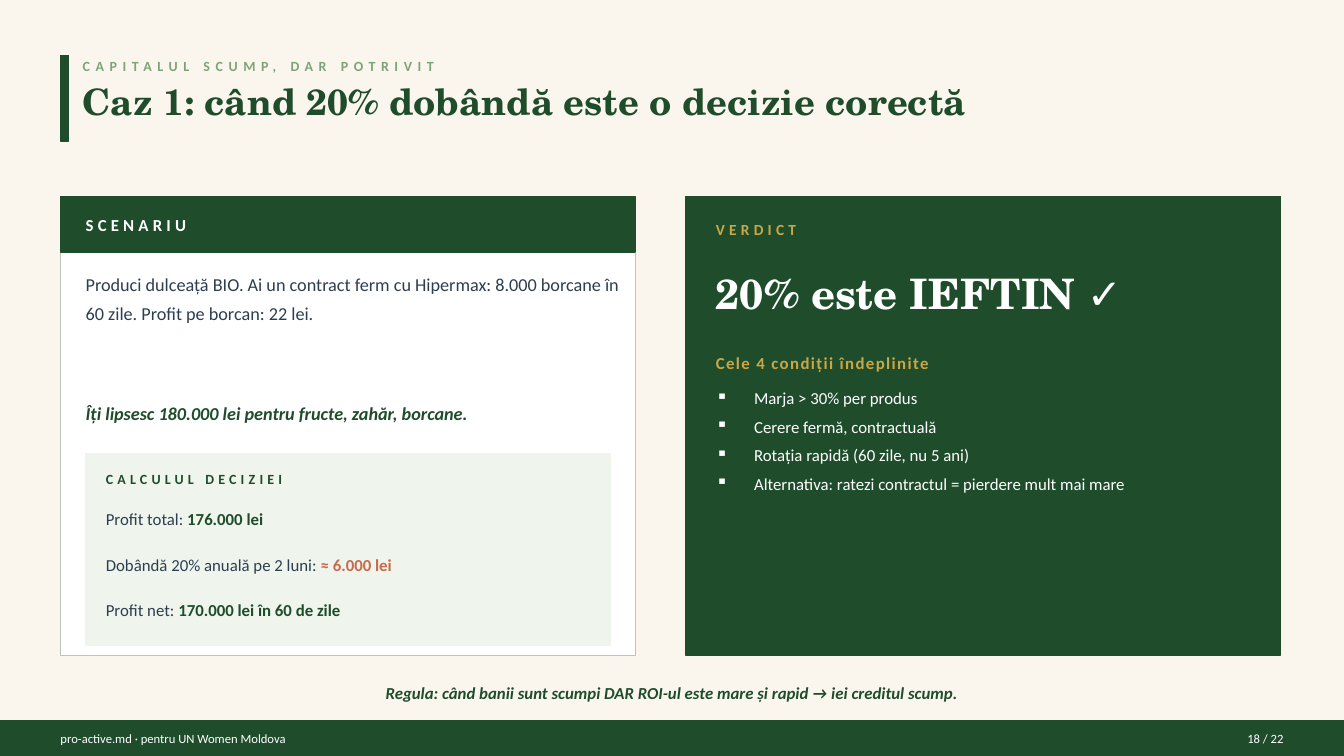
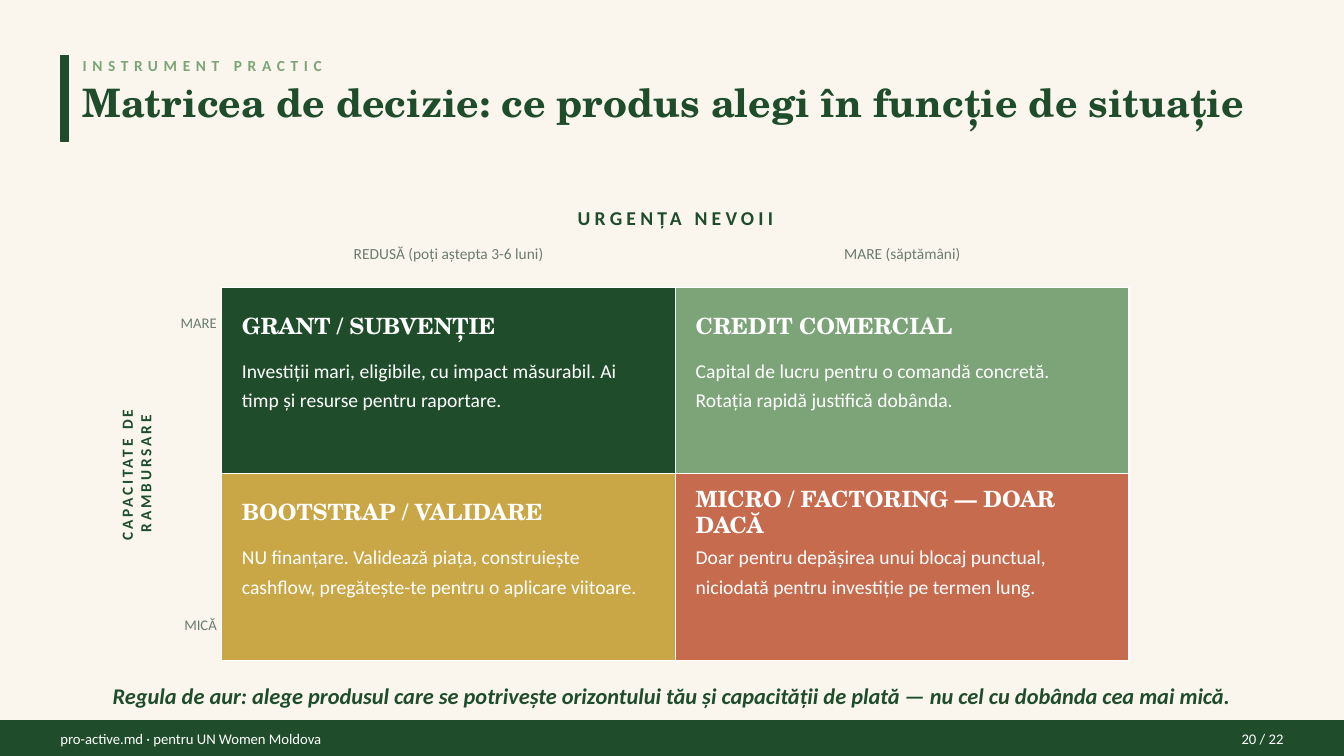
"""Build two slides on choosing the right kind of financing."""
from lxml import etree
from pptx import Presentation
from pptx import util as u
from pptx.dml.color import RGBColor
from pptx.enum import shapes, text
from pptx.oxml import ns

GREEN = RGBColor(0x1F, 0x4D, 0x2C)
SAGE = RGBColor(0x7D, 0xA4, 0x78)
GOLD = RGBColor(0xC9, 0xA6, 0x46)
RUST = RGBColor(0xC6, 0x6B, 0x4E)
CREAM = RGBColor(0xFA, 0xF6, 0xEE)
MINT = RGBColor(0xEF, 0xF4, 0xEC)
BORDER = RGBColor(0xB8, 0xC9, 0xB5)
INK = RGBColor(0x2C, 0x3E, 0x50)
GRAY = RGBColor(0x6B, 0x7B, 0x6E)
WHITE = RGBColor(0xFF, 0xFF, 0xFF)

BODY, SERIF = "Calibri", "TeX Gyre Schola"
LEFT, CENTER, RIGHT = text.PP_ALIGN.LEFT, text.PP_ALIGN.CENTER, text.PP_ALIGN.RIGHT
TOP, MIDDLE = text.MSO_ANCHOR.TOP, text.MSO_ANCHOR.MIDDLE

WIDTH, HEIGHT = 13.33, 7.5
MARGIN, CONTENT = 0.6, 12.13
BAND = 0.35
FOOTER = "pro-active.md · pentru UN Women Moldova"

CASE = {
    "kicker": "CAPITALUL SCUMP, DAR POTRIVIT",
    "title": "Caz 1: când 20% dobândă este o decizie corectă",
    "rule": "Regula: când banii sunt scumpi DAR ROI-ul este mare și rapid → iei creditul scump.",
    "page": "18 / 22",
    "sizes": {"kicker": 10, "title": 26, "rule": 12, "footer": 9},
    "rule_height": 0.35,
}
SCENARIO = ("Produci dulceață BIO. Ai un contract ferm cu Hipermax: "
            "8.000 borcane în 60 zile. Profit pe borcan: 22 lei.")
NEED = "Îți lipsesc 180.000 lei pentru fructe, zahăr, borcane."
CALCULATION = [
    ("Profit total: ", "176.000 lei", GREEN),
    ("Dobândă 20% anuală pe 2 luni: ", "≈ 6.000 lei", RUST),
    ("Profit net: ", "170.000 lei în 60 de zile", GREEN),
]
CONDITIONS = [
    "Marja > 30% per produs",
    "Cerere fermă, contractuală",
    "Rotația rapidă (60 zile, nu 5 ani)",
    "Alternativa: ratezi contractul = pierdere mult mai mare",
]

MATRIX = {
    "kicker": "INSTRUMENT PRACTIC",
    "title": "Matricea de decizie: ce produs alegi în funcție de situație",
    "rule": "Regula de aur: alege produsul care se potrivește orizontului tău și "
            "capacității de plată — nu cel cu dobânda cea mai mică.",
    "page": "20 / 22",
    "sizes": {"kicker": 11, "title": 28, "rule": 16, "footer": 10.5},
    "rule_height": 0.4,
}
URGENCY = ["REDUSĂ (poți aștepta 3-6 luni)", "MARE (săptămâni)"]
CAPACITY = [("MARE", 3.05), ("MICĂ", 6.05)]
QUADRANTS = [
    ("GRANT / SUBVENȚIE", GREEN,
     "Investiții mari, eligibile, cu impact măsurabil. Ai timp și resurse pentru raportare."),
    ("CREDIT COMERCIAL", SAGE,
     "Capital de lucru pentru o comandă concretă. Rotația rapidă justifică dobânda."),
    ("BOOTSTRAP / VALIDARE", GOLD,
     "NU finanțare. Validează piața, construiește cashflow, "
     "pregătește-te pentru o aplicare viitoare."),
    ("MICRO / FACTORING — DOAR DACĂ", RUST,
     "Doar pentru depășirea unui blocaj punctual, niciodată pentru investiție pe termen lung."),
]


def add_panel(slide, box, fill, line=None, weight=1):
    """Draw a filled rectangle, outlined in its own colour unless told otherwise."""
    panel = slide.shapes.add_shape(shapes.MSO_SHAPE.RECTANGLE, *map(u.Inches, box))
    panel.shadow.inherit = False
    panel.fill.solid()
    panel.fill.fore_color.rgb = fill
    panel.line.color.rgb = line or fill
    panel.line.width = u.Pt(weight)


def add_bullet(paragraph, indent=0.38):
    """Give a paragraph a square bullet with a hanging indent."""
    properties = paragraph._p.get_or_add_pPr()
    properties.set("marL", str(u.Inches(indent)))
    properties.set("indent", str(-u.Inches(indent)))
    etree.SubElement(properties, ns.qn("a:buChar")).set("char", "▪")
    paragraph.space_after = u.Pt(6)


def add_text(slide, box, lines, size, color, font=BODY, bold=False, italic=False,
             align=LEFT, anchor=MIDDLE, tracking=0, leading=None, bullets=False):
    """Place one or more evenly styled paragraphs and return the text box."""
    text_box = slide.shapes.add_textbox(*map(u.Inches, box))
    frame = text_box.text_frame
    frame.word_wrap = True
    frame.vertical_anchor = anchor
    frame.margin_left = frame.margin_right = frame.margin_top = frame.margin_bottom = 0
    for index, line in enumerate([lines] if isinstance(lines, str) else lines):
        paragraph = frame.paragraphs[0] if index == 0 else frame.add_paragraph()
        paragraph.alignment = align
        if leading:
            paragraph.line_spacing = leading
        if bullets:
            add_bullet(paragraph)
        paragraph.font.name = font
        paragraph.font.size = u.Pt(size)
        paragraph.font.color.rgb = color
        paragraph.font.bold = bold
        paragraph.font.italic = italic
        run = paragraph.add_run()
        run.text = line
        if tracking:
            run._r.get_or_add_rPr().set("spc", str(tracking * 100))
    return text_box


def add_base_slide(presentation, content):
    """Add a slide with its background, heading, closing rule and footer."""
    slide = presentation.slides.add_slide(presentation.slide_layouts[6])
    slide.background.fill.solid()
    slide.background.fill.fore_color.rgb = CREAM
    sizes = content["sizes"]
    add_panel(slide, (MARGIN, 0.55, 0.08, 0.85), GREEN)
    add_text(slide, (0.82, 0.5, CONTENT, 0.3), content["kicker"], sizes["kicker"], SAGE,
             bold=True, tracking=4)
    add_text(slide, (0.82, 0.78, CONTENT, 0.85), content["title"], sizes["title"], GREEN,
             font=SERIF, bold=True, anchor=TOP)
    add_text(slide, (MARGIN, 6.7, CONTENT, content["rule_height"]), content["rule"],
             sizes["rule"], GREEN, bold=True, italic=True, align=CENTER)
    band_top = HEIGHT - BAND
    add_panel(slide, (0, band_top, WIDTH, BAND), GREEN)
    add_text(slide, (MARGIN, band_top, 6, BAND), FOOTER, sizes["footer"], WHITE)
    add_text(slide, (MARGIN + CONTENT - 1.5, band_top, 1.5, BAND), content["page"],
             sizes["footer"], WHITE, align=RIGHT)
    return slide


def add_scenario(slide):
    """Fill the left card with the scenario and its calculation."""
    top, width, inner, text_width = 1.95, 5.7, MARGIN + 0.25, 5.4
    add_panel(slide, (MARGIN, top, width, 4.55), WHITE, BORDER, 0.75)
    add_panel(slide, (MARGIN, top, width, 0.55), GREEN)
    add_text(slide, (inner, top, text_width, 0.55), "SCENARIU", 12, WHITE,
             bold=True, tracking=3)
    add_text(slide, (inner, 2.65, text_width, 1.1), SCENARIO, 13, INK, anchor=TOP, leading=1.3)
    add_text(slide, (inner, 3.8, text_width, 0.6), NEED, 13, GREEN, bold=True, italic=True)
    add_panel(slide, (inner, 4.5, 5.2, 1.9), MINT)
    add_text(slide, (inner + 0.2, 4.6, 5, 0.3), "CALCULUL DECIZIEI", 10, GREEN,
             bold=True, tracking=3)
    for row, (label, amount, color) in enumerate(CALCULATION):
        line = add_text(slide, (inner + 0.2, 4.95 + row * 0.45, 5.1, 0.4), label, 12, INK)
        run = line.text_frame.paragraphs[0].add_run()
        run.text = amount
        run.font.bold = True
        run.font.color.rgb = color


def add_verdict(slide):
    """Fill the right card with the verdict and its conditions."""
    left, width = 7.1, 5.4
    add_panel(slide, (left - 0.3, 1.95, 5.9, 4.55), GREEN)
    add_text(slide, (left, 2.1, width, 0.35), "VERDICT", 11, GOLD, bold=True, tracking=3)
    add_text(slide, (left, 2.5, width, 0.8), "20% este IEFTIN ✓", 30, WHITE,
             font=SERIF, bold=True)
    add_text(slide, (left, 3.4, width, 0.4), "Cele 4 condiții îndeplinite", 12, GOLD,
             bold=True, tracking=1)
    add_text(slide, (left, 3.85, width, 2.3), CONDITIONS, 12, WHITE, anchor=TOP, bullets=True)


def add_matrix(slide):
    """Draw the two-by-two matrix with both axes."""
    left, top, width, height, pad = 2.2, 2.85, 4.5, 1.85, 0.2
    axis = add_text(slide, (MARGIN, 4.5, 1.5, 0.4), "CAPACITATE DE RAMBURSARE", 11, GREEN,
                    bold=True, align=CENTER, tracking=2)
    axis.rotation = 270
    add_text(slide, (left, 2, 2 * width, 0.32), "URGENȚA NEVOII", 14, GREEN,
             bold=True, align=CENTER, tracking=3)
    for column, label in enumerate(URGENCY):
        add_text(slide, (left + column * width, 2.35, width, 0.32), label, 11, GRAY,
                 align=CENTER)
    for index, (name, color, advice) in enumerate(QUADRANTS):
        row, column = divmod(index, 2)
        x, y = left + column * width, top + row * height
        add_panel(slide, (x, y, width, height), color, WHITE)
        add_text(slide, (x + pad, y + 0.15, width - 2 * pad, 0.45), name, 16, WHITE,
                 font=SERIF, bold=True)
        add_text(slide, (x + pad, y + 0.65, width - 2 * pad, 1.1), advice, 14, WHITE,
                 anchor=TOP, leading=1.25)
    for label, y in CAPACITY:
        add_text(slide, (left - 0.55, y, 0.5, 0.3), label, 10.5, GRAY, align=RIGHT)


def main():
    """Assemble and save the presentation."""
    presentation = Presentation()
    presentation.slide_width = u.Inches(WIDTH)
    presentation.slide_height = u.Inches(HEIGHT)
    case_slide = add_base_slide(presentation, CASE)
    add_scenario(case_slide)
    add_verdict(case_slide)
    add_matrix(add_base_slide(presentation, MATRIX))
    presentation.save("out.pptx")


if __name__ == "__main__":
    main()
